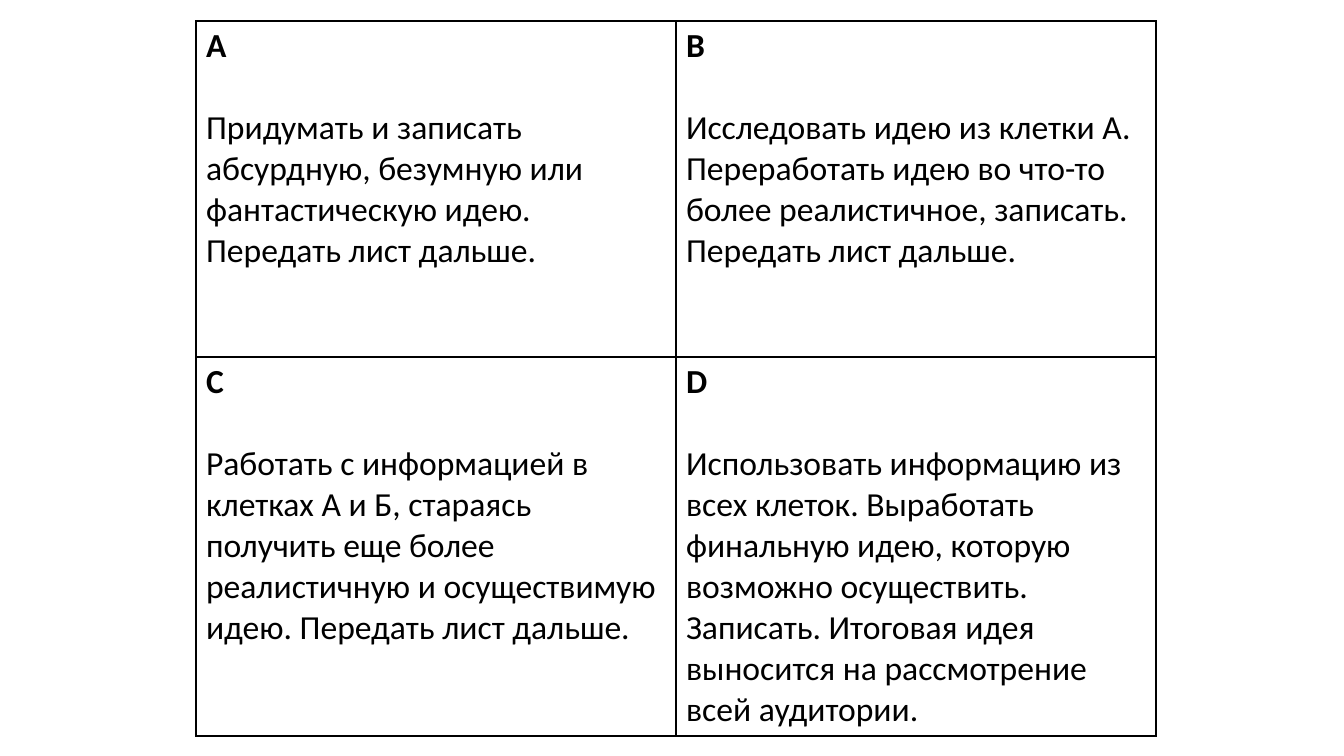
from lxml import etree
from pptx import Presentation
from pptx.dml.color import RGBColor
from pptx.oxml.ns import qn
from pptx.util import Emu, Pt

PX_PER_INCH = 100.8
FONT = "Calibri"
TEXT_SIZE = 24
BODY_GAP = 29.3  # one text line, in points
BLACK = "000000"
BORDER_WIDTH = 1

COLUMN_WIDTH = 480
ROW_HEIGHTS = [336, 379]

STEPS = [
    [
        ("A", "Придумать и записать абсурдную, безумную или фантастическую идею. "
              "Передать лист дальше."),
        ("B", "Исследовать идею из клетки А. Переработать идею во что-то более "
              "реалистичное, записать. Передать лист дальше."),
    ],
    [
        ("C", "Работать с информацией в клетках А и Б, стараясь получить еще более "
              "реалистичную и осуществимую идею. Передать лист дальше."),
        ("D", "Использовать информацию из всех клеток. Выработать финальную идею, "
              "которую возможно осуществить. Записать. Итоговая идея выносится "
              "на рассмотрение всей аудитории."),
    ],
]


def px(length):
    return Emu(round(length * 914400 / PX_PER_INCH))


def color(hex_string):
    return RGBColor.from_string(hex_string)


def style_paragraph(paragraph, bold):
    for run in paragraph.runs:
        run.font.name = FONT
        run.font.size = Pt(TEXT_SIZE)
        run.font.bold = bold
        run.font.color.rgb = color(BLACK)


def add_borders(cell):
    properties = cell._tc.get_or_add_tcPr()
    for position, side in enumerate(("a:lnL", "a:lnR", "a:lnT", "a:lnB")):
        border = etree.Element(qn(side), w=str(Pt(BORDER_WIDTH)))
        fill = etree.SubElement(border, qn("a:solidFill"))
        etree.SubElement(fill, qn("a:srgbClr"), val=BLACK)
        properties.insert(position, border)


def fill_cell(cell, letter, instruction):
    cell.fill.background()
    add_borders(cell)
    heading = cell.text_frame.paragraphs[0]
    heading.text = letter
    style_paragraph(heading, True)
    body = cell.text_frame.add_paragraph()
    body.text = instruction
    body.space_before = Pt(BODY_GAP)
    style_paragraph(body, False)


def add_step_table(slide, left, top):
    column_count = len(STEPS[0])
    table = slide.shapes.add_table(
        len(STEPS), column_count, px(left), px(top),
        px(COLUMN_WIDTH * column_count), px(sum(ROW_HEIGHTS))).table
    table.first_row = False
    table.horz_banding = False
    for column in table.columns:
        column.width = px(COLUMN_WIDTH)
    for row, height, steps in zip(table.rows, ROW_HEIGHTS, STEPS):
        row.height = px(height)
        for cell, (letter, instruction) in zip(row.cells, steps):
            fill_cell(cell, letter, instruction)


def main():
    presentation = Presentation()
    presentation.slide_width = px(1344)
    presentation.slide_height = px(756)
    slide = presentation.slides.add_slide(presentation.slide_layouts[6])

    # Four-step idea sheet
    add_step_table(slide, 196, 21)

    presentation.save("out.pptx")


if __name__ == "__main__":
    main()
